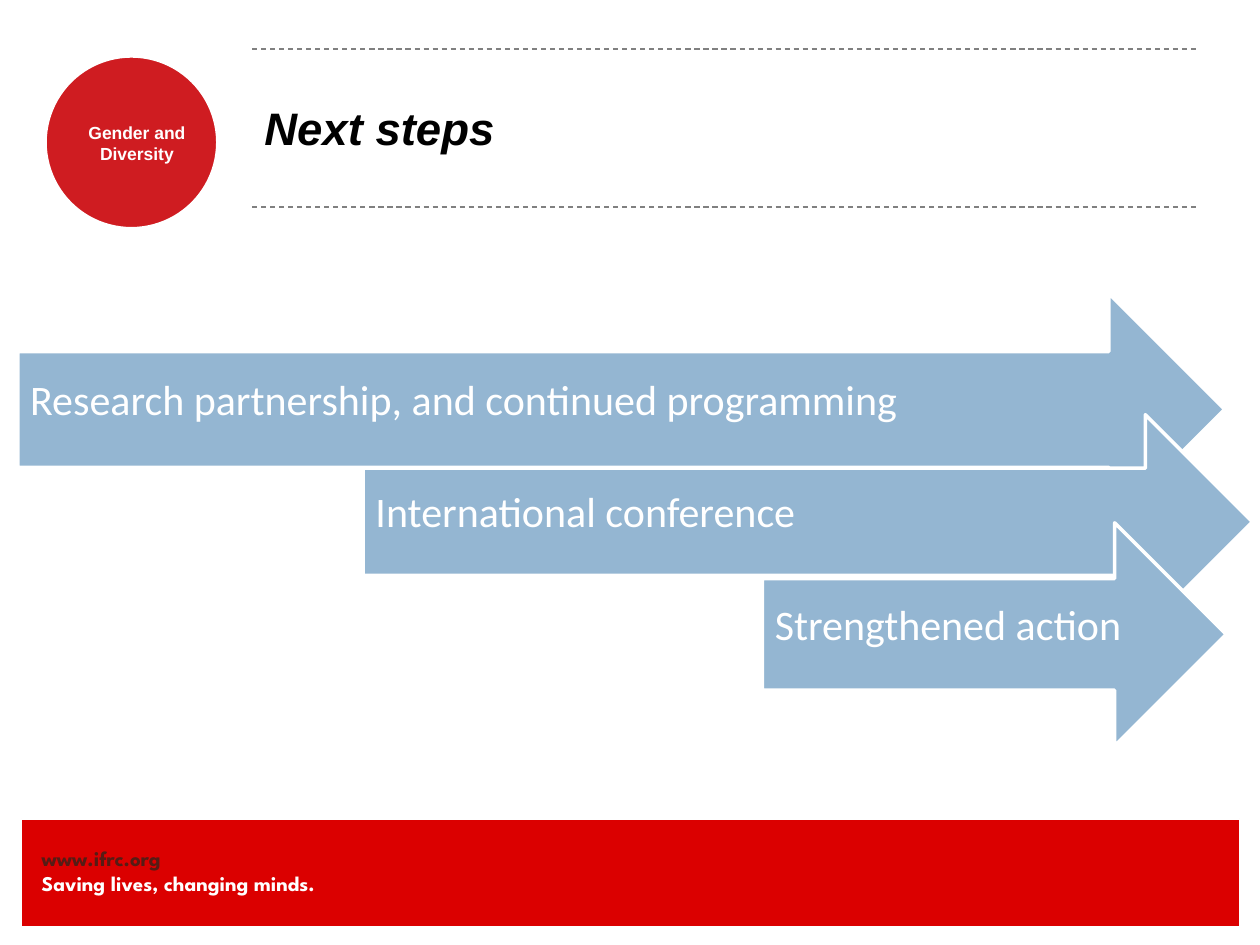
import pptx
import pptx.util
import pptx.dml.color
import pptx.enum.dml
import pptx.enum.shapes
import pptx.enum.text
import pptx.oxml.ns
import lxml.etree

Cm = pptx.util.Cm
Pt = pptx.util.Pt
RGBColor = pptx.dml.color.RGBColor
Shapes = pptx.enum.shapes.MSO_SHAPE
Align = pptx.enum.text.PP_ALIGN
Anchor = pptx.enum.text.MSO_ANCHOR

WHITE = RGBColor(0xFF, 0xFF, 0xFF)
BLACK = RGBColor(0x00, 0x00, 0x00)
GREY = RGBColor(0x80, 0x80, 0x80)
BLUE = RGBColor(0x94, 0xB6, 0xD2)
FOOTER_RED = RGBColor(0xDB, 0x00, 0x00)
CIRCLE_RED = RGBColor(0xCF, 0x1C, 0x21)
BROWN = RGBColor(0x55, 0x1C, 0x15)


def apply(target, values):
    for name, value in values.items():
        setattr(target, name, value)


class SlideBuilder:
    footer_font = {"name": "League Spartan", "size": Pt(12), "bold": True}
    badge_font = {"name": "Arial", "size": Pt(10), "bold": True}
    title_font = {"name": "Arial", "size": Pt(26), "bold": True, "italic": True}
    arrow_font = {"name": "Calibri", "size": Pt(24), "bold": False}
    no_margins = dict.fromkeys(
        ("margin_left", "margin_top", "margin_right", "margin_bottom"), 0)
    arrow_frame = {
        "margin_left": Cm(0.25), "margin_top": Cm(0.25),
        "margin_right": Cm(0.71), "margin_bottom": Cm(0.56),
        "vertical_anchor": Anchor.MIDDLE, "word_wrap": True,
    }

    def __init__(self, slide):
        self.slide = slide

    def shape(self, kind, box, fill, line_width):
        shape = self.slide.shapes.add_shape(kind, *map(Cm, box))
        shape.shadow.inherit = False
        shape.fill.solid()
        shape.fill.fore_color.rgb = fill
        shape.line.color.rgb = WHITE
        shape.line.width = Pt(line_width)
        return shape

    def fill_frame(self, frame, lines, font, frame_format, paragraph_format):
        apply(frame, frame_format)
        for index, (text, color) in enumerate(lines):
            paragraph = frame.add_paragraph() if index else frame.paragraphs[0]
            apply(paragraph, paragraph_format)
            run = paragraph.add_run()
            run.text = text
            apply(run.font, font)
            run.font.color.rgb = color

    def text(self, box, lines, font, frame_format, alignment=Align.LEFT):
        frame = self.slide.shapes.add_textbox(*map(Cm, box)).text_frame
        self.fill_frame(frame, lines, font, {"word_wrap": True, **frame_format},
                        {"alignment": alignment})

    def arrow(self, box, label):
        shape = self.shape(Shapes.RIGHT_ARROW, box, BLUE, 2)
        self.fill_frame(shape.text_frame, [(label, WHITE)], self.arrow_font,
                        self.arrow_frame,
                        {"alignment": Align.LEFT, "line_spacing": 0.9})

    def dashed_rule(self, left, right, top):
        connector = self.slide.shapes.add_connector(
            pptx.enum.shapes.MSO_CONNECTOR.STRAIGHT,
            Cm(left), Cm(top), Cm(right), Cm(top))
        connector.line.color.rgb = GREY
        apply(connector.line, {
            "width": Pt(0.75),
            "dash_style": pptx.enum.dml.MSO_LINE.DASH,
        })
        lxml.etree.SubElement(connector._element.spPr,
                              pptx.oxml.ns.qn("a:effectLst"))


def main():
    presentation = pptx.Presentation()
    apply(presentation, {"slide_width": Cm(25.4), "slide_height": Cm(19.05)})
    slide = presentation.slides.add_slide(presentation.slide_layouts[6])
    builder = SlideBuilder(slide)

    builder.shape(Shapes.RECTANGLE, (0.43, 16.51, 24.56, 2.18), FOOTER_RED, 0.75)
    builder.text((0.84, 17.04, 8.69, 1.02),
                 [("www.ifrc.org", BROWN), ("Saving lives, changing minds.", WHITE)],
                 builder.footer_font, builder.no_margins)

    builder.shape(Shapes.OVAL, (0.9, 1.12, 3.5, 3.5), CIRCLE_RED, 2.5)
    builder.text((1.17, 2.46, 3.18, 0.86), [("Gender and Diversity", WHITE)],
                 builder.badge_font, builder.no_margins, Align.CENTER)

    for top in (0.99, 4.17):
        builder.dashed_rule(5.08, 24.13, top)
    builder.text((5.08, 0.97, 19.05, 3.18), [("Next steps", BLACK)],
                 builder.title_font, {"vertical_anchor": Anchor.MIDDLE})

    steps = [
        ((0.36, 5.92, 24.33, 4.67), "Research partnership, and continued programming"),
        ((7.32, 8.36, 17.93, 4.32), "International conference"),
        ((15.37, 10.54, 9.35, 4.5), "Strengthened action"),
    ]
    for box, label in steps:
        builder.arrow(box, label)

    presentation.save("out.pptx")


if __name__ == "__main__":
    main()
